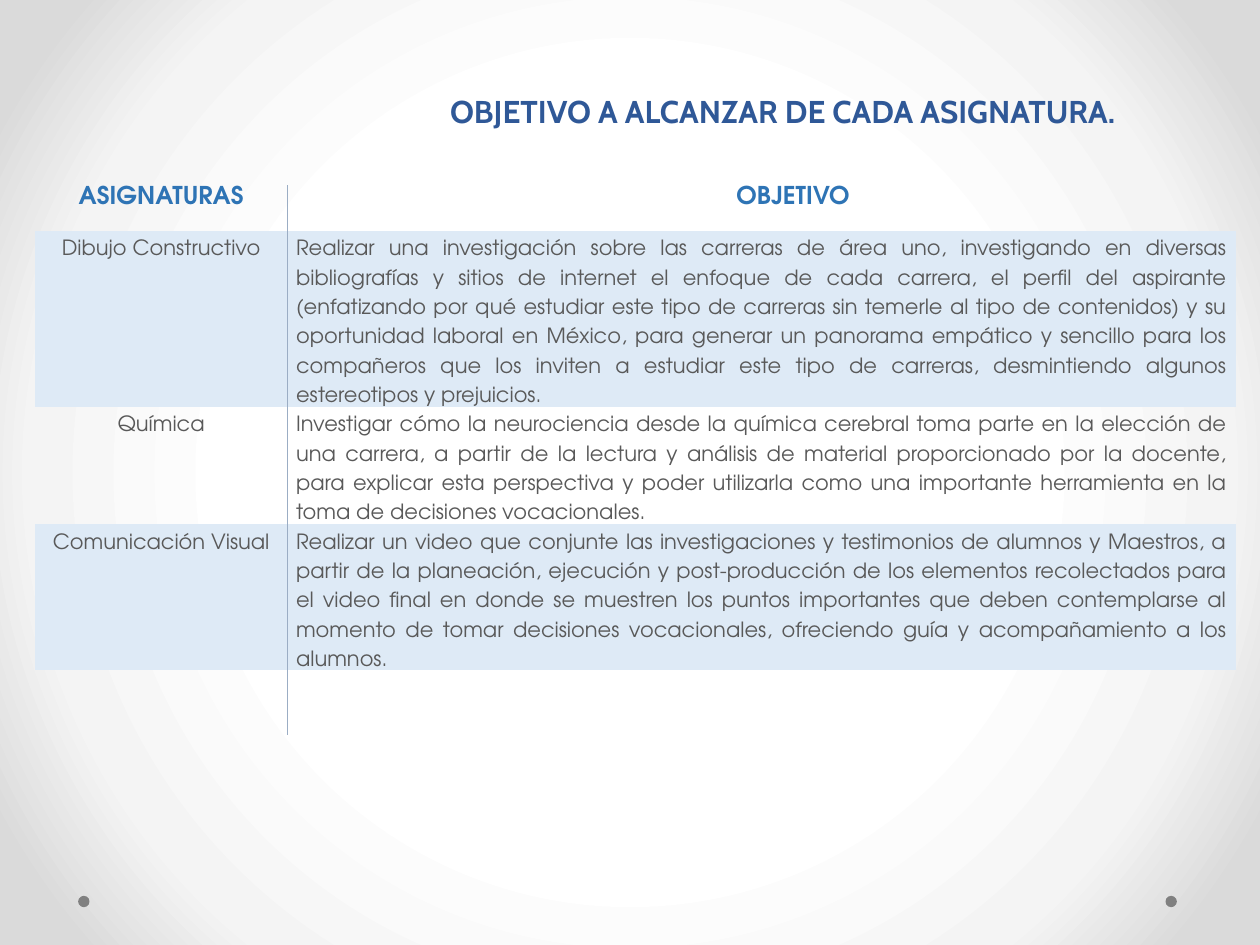
from lxml import etree
from pptx import Presentation
from pptx import util as u
from pptx.dml.color import RGBColor
from pptx.enum import shapes, text
from pptx.oxml import ns, parse_xml

TITLE_BLUE = RGBColor(0x2F, 0x58, 0x97)
HEADER_BLUE = RGBColor(0x2E, 0x74, 0xB5)
BODY_GRAY = RGBColor(0x59, 0x59, 0x59)
BAND_BLUE = RGBColor(0xDE, 0xEA, 0xF6)
RULE_BLUE = RGBColor(0x9B, 0xAD, 0xC4)
DOT_GRAY = RGBColor(0x80, 0x80, 0x80)
WHITE = RGBColor(0xFF, 0xFF, 0xFF)
PALE_GRAY = RGBColor(0xF4, 0xF4, 0xF4)
EDGE_GRAY = RGBColor(0xDA, 0xDA, 0xDA)
NO_TABLE_STYLE = "{2D5ABB26-0587-4C30-8999-92F81FD0307C}"

HEADERS = ("ASIGNATURAS", "OBJETIVO")
SUBJECTS = (
    ("Dibujo Constructivo",
     "Realizar una investigación sobre las carreras de área uno, investigando en "
     "diversas bibliografías y sitios de internet el enfoque de cada carrera, el "
     "perfil del aspirante (enfatizando por qué estudiar este tipo de carreras sin "
     "temerle al tipo de contenidos) y su oportunidad laboral en México, para generar "
     "un panorama empático y sencillo para los compañeros que los inviten a estudiar "
     "este tipo de carreras, desmintiendo algunos estereotipos y prejuicios."),
    ("Química",
     "Investigar cómo la neurociencia desde la química cerebral toma parte en la "
     "elección de una carrera, a partir de la lectura y análisis de material "
     "proporcionado por la docente, para explicar esta perspectiva y poder utilizarla "
     "como una importante herramienta en la toma de decisiones vocacionales."),
    ("Comunicación Visual",
     "Realizar un video que conjunte las investigaciones y testimonios de alumnos y "
     "Maestros, a partir de la planeación, ejecución y post-producción de los "
     "elementos recolectados para el video final en donde se muestren los puntos "
     "importantes que deben contemplarse al momento de tomar decisiones vocacionales, "
     "ofreciendo guía y acompañamiento a los alumnos."),
)


class SlideBuilder:
    title_font = "Cabin"
    table_font = "TeX Gyre Adventor"

    def __init__(self, slide):
        self.slide = slide

    def background(self, stops):
        stop_xml = "".join(
            f'<a:gs pos="{position * 1000}"><a:srgbClr val="{color}"/></a:gs>'
            for position, color in stops)
        background = parse_xml(
            f'<p:bg {ns.nsdecls("p", "a")}><p:bgPr><a:gradFill><a:gsLst>{stop_xml}'
            '</a:gsLst><a:path path="circle"><a:fillToRect l="50000" t="50000" '
            'r="50000" b="50000"/></a:path></a:gradFill><a:effectLst/></p:bgPr></p:bg>')
        self.slide.element.cSld.insert(0, background)

    def dot(self, left, top, size):
        shape = self.slide.shapes.add_shape(
            shapes.MSO_SHAPE.OVAL, *map(u.Inches, (left, top, size, size)))
        shape.shadow.inherit = False
        shape.fill.solid()
        shape.fill.fore_color.rgb = DOT_GRAY
        shape.line.fill.background()

    def style(self, paragraph, font, size, color, bold, align, spacing):
        paragraph.font.name = font
        paragraph.font.size = u.Pt(size)
        paragraph.font.color.rgb = color
        paragraph.font.bold = bold
        paragraph.alignment = align
        paragraph.line_spacing = spacing

    def title(self, content, left, top, width, height):
        shape = self.slide.shapes.add_textbox(
            *map(u.Inches, (left, top, width, height)))
        frame = shape.text_frame
        frame.word_wrap = True
        frame.vertical_anchor = text.MSO_ANCHOR.BOTTOM
        frame.text = content
        self.style(frame.paragraphs[0], self.title_font, 18, TITLE_BLUE, True,
                   text.PP_ALIGN.RIGHT, u.Pt(58))

    def table(self, left, top, widths, heights):
        frame = self.slide.shapes.add_table(
            len(heights), len(widths),
            *map(u.Inches, (left, top, sum(widths), sum(heights))))
        table = frame.table
        table.first_row = table.horz_banding = False
        table._tbl.tblPr.find(ns.qn("a:tableStyleId")).text = NO_TABLE_STYLE
        for column, width in zip(table.columns, widths):
            column.width = u.Inches(width)
        for row, height in zip(table.rows, heights):
            row.height = u.Inches(height)
            for cell, side in zip(row.cells, ("lnR", "lnL")):
                cell.fill.background()
                self.border(cell, side)
        return table

    def border(self, cell, side):
        line = etree.Element(ns.qn(f"a:{side}"), w=str(u.Pt(1)))
        fill = etree.SubElement(line, ns.qn("a:solidFill"))
        etree.SubElement(fill, ns.qn("a:srgbClr"), val=str(RULE_BLUE))
        cell._tc.get_or_add_tcPr().insert(0, line)

    def cell(self, cell, content, size, color, bold, align, spacing):
        cell.margin_left = cell.margin_right = u.Inches(0.07)
        cell.margin_top = cell.margin_bottom = 0
        cell.text = content
        paragraph = cell.text_frame.paragraphs[0]
        self.style(paragraph, self.table_font, size, color, bold, align, spacing)
        return paragraph

    def band(self, row):
        for cell in row.cells:
            cell.fill.solid()
            cell.fill.fore_color.rgb = BAND_BLUE


def main():
    presentation = Presentation()
    presentation.slide_width = u.Inches(10)
    presentation.slide_height = u.Inches(7.5)
    builder = SlideBuilder(presentation.slides.add_slide(presentation.slide_layouts[6]))

    builder.background(((50, WHITE), (76, PALE_GRAY), (92, EDGE_GRAY)))
    for left in (9.25, 0.62):
        builder.dot(left, 7.11, 0.09)

    table = builder.table(0.28, 1.47, (2, 7.53), (0.36,) + (0.51,) * 4)
    center, justify = text.PP_ALIGN.CENTER, text.PP_ALIGN.JUSTIFY
    for column, header in enumerate(HEADERS):
        paragraph = builder.cell(
            table.cell(0, column), header, 14, HEADER_BLUE, True, center, 1.07)
        if column == 1:
            paragraph._p.get_or_add_pPr().set("marL", str(u.Inches(0.5)))
    for row, subject in enumerate(SUBJECTS, start=1):
        for column, align in enumerate((center, justify)):
            builder.cell(table.cell(row, column), subject[column],
                         12, BODY_GRAY, False, align, 1.5)
        if row % 2:
            builder.band(table.rows[row])

    builder.title("OBJETIVO A ALCANZAR DE CADA ASIGNATURA.", 3.03, 0.42, 5.92, 0.66)
    presentation.save("out.pptx")


if __name__ == "__main__":
    main()
